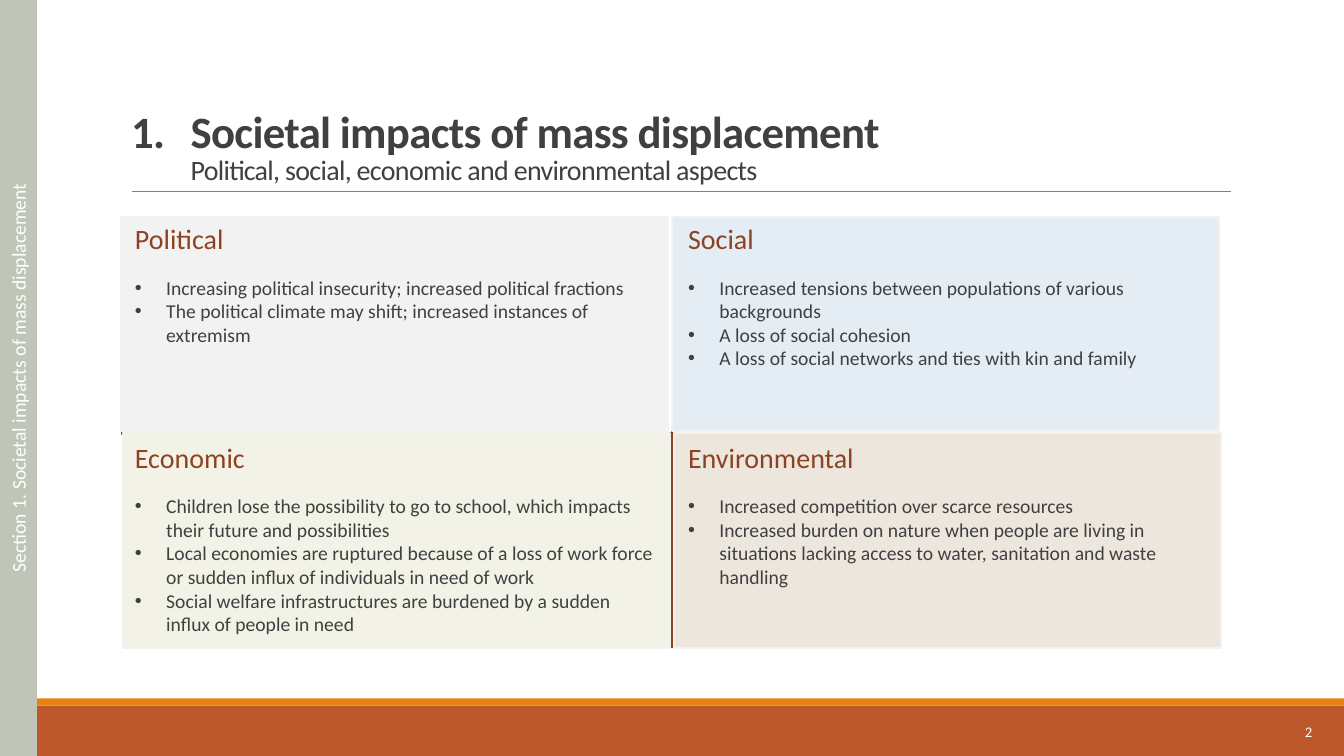
from lxml import etree
from pptx import Presentation
from pptx.dml.color import RGBColor
from pptx.enum.shapes import MSO_CONNECTOR, MSO_SHAPE
from pptx.enum.text import MSO_ANCHOR, MSO_AUTO_SIZE, PP_ALIGN
from pptx.oxml.ns import qn
from pptx.util import Cm, Pt

RECT = MSO_SHAPE.RECTANGLE
STRAIGHT = MSO_CONNECTOR.STRAIGHT
MIDDLE, BOTTOM = MSO_ANCHOR.MIDDLE, MSO_ANCHOR.BOTTOM
NO_FIT = MSO_AUTO_SIZE.NONE
LEFT, CENTER, RIGHT = PP_ALIGN.LEFT, PP_ALIGN.CENTER, PP_ALIGN.RIGHT

THEME = {
    "font": "Calibri",
    "text": "404040", "heading": "8E4221", "white": "FFFFFF", "rule": "808080",
    "footer": "BD582C", "accent": "E48312", "sidebar": "BFC6B8", "border": "F2F2F2",
    "political": "F2F2F2", "social": "E4EDF4",
    "economic": "F3F2E6", "environmental": "ECE6DD",
    "title_size": 32, "heading_size": 20, "body_size": 14, "number_size": 10.5,
}


def add_text(p, text, size="body_size", color="text", bold=False, align=LEFT, spacing=None):
    p.alignment = align
    r = p.add_run()
    r.text = text
    r.font.name = THEME["font"]
    r.font.size = Pt(THEME[size])
    r.font.bold = bold
    r.font.color.rgb = RGBColor.from_string(THEME[color])
    if spacing:
        r.font._element.set("spc", str(spacing))


def add_rect(x, y, w, h, fill, line=None):
    sp = s.shapes.add_shape(RECT, Cm(x), Cm(y), Cm(w), Cm(h))
    sp.shadow.inherit = False
    sp.fill.solid()
    sp.fill.fore_color.rgb = RGBColor.from_string(THEME[fill])
    if line:
        sp.line.color.rgb = RGBColor.from_string(THEME[line])
        sp.line.width = Pt(1.25)
    else:
        sp.line.fill.background()
    return sp


prs = Presentation()
prs.slide_width, prs.slide_height = Cm(33.87), Cm(19.05)
s = prs.slides.add_slide(prs.slide_layouts[5])

add_rect(0, 17.78, 33.87, 1.27, "footer")
add_rect(0, 17.6, 33.87, 0.18, "accent")

title = s.shapes.title
title.left, title.top, title.width, title.height = Cm(3.05), Cm(0.79), Cm(27.94), Cm(4.04)
tf = title.text_frame
tf.auto_size = NO_FIT
tf.vertical_anchor = BOTTOM
p = tf.paragraphs[0]
p.line_spacing = 0.85
p._p.get_or_add_pPr().set("marL", str(Cm(1.5)))
p._p.get_or_add_pPr().set("indent", str(-Cm(1.5)))
add_text(p, "1.\tSocietal impacts of mass displacement", size="title_size", bold=True, spacing=-50)
p.add_line_break()
etree.SubElement(p._p[-1], qn("a:rPr"), sz=str(THEME["title_size"] * 100))
add_text(p, "Political, social, economic and environmental aspects", size="heading_size", spacing=-50)

number = s.shapes.add_textbox(Cm(29.69), Cm(17.93), Cm(3.63), Cm(1.02))
tf = number.text_frame
tf.word_wrap = True
tf.vertical_anchor = MIDDLE
add_text(tf.paragraphs[0], "2", size="number_size", color="white", align=RIGHT)

sidebar = add_rect(0, 0, 0.91, 19.05, "sidebar", "sidebar")
tf = sidebar.text_frame
tf.vertical_anchor = MIDDLE
tf._txBody.bodyPr.set("vert", "vert270")
add_text(tf.paragraphs[0], "Section 1. Societal impacts of mass displacement", color="white", align=CENTER)

lines = [
    (3.33, 4.83, 31.01, 4.83, "rule", 0.5),
    (16.94, 5.49, 16.94, 16.33, "heading", 2.25),
    (3.05, 10.92, 30.78, 10.92, "heading", 2.25),
]
for x1, y1, x2, y2, color, width in lines:
    line = s.shapes.add_connector(STRAIGHT, Cm(x1), Cm(y1), Cm(x2), Cm(y2))
    line.line.color.rgb = RGBColor.from_string(THEME[color])
    line.line.width = Pt(width)
    etree.SubElement(line._element.spPr, qn("a:effectLst"))

quadrants = [
    ("Political", 0, 0, [
        "Increasing political insecurity; increased political fractions",
        "The political climate may shift; increased instances of extremism",
    ]),
    ("Environmental", 1, 1, [
        "Increased competition over scarce resources",
        "Increased burden on nature when people are living in situations lacking access "
        "to water, sanitation and waste handling",
    ]),
    ("Social", 1, 0, [
        "Increased tensions between populations of various backgrounds",
        "A loss of social cohesion",
        "A loss of social networks and ties with kin and family",
    ]),
    ("Economic", 0, 1, [
        "Children lose the possibility to go to school, which impacts their future and possibilities",
        "Local economies are ruptured because of a loss of work force "
        "or sudden influx of individuals in need of work",
        "Social welfare infrastructures are burdened by a sudden influx of people in need",
    ]),
]
for heading, col, row, bullets in quadrants:
    add_rect(3.05 + 13.89 * col + 0.05 * row, 5.46 + 5.46 * row, 13.79, 5.41, heading.lower(), "border")
    box = s.shapes.add_textbox(Cm(3.15 + 13.94 * col), Cm(5.46 + 5.51 * row), Cm(13.61), Cm(5.3))
    tf = box.text_frame
    tf.word_wrap = True
    p = tf.paragraphs[0]
    p.space_after = Pt(14.6)
    add_text(p, heading, size="heading_size", color="heading")
    for bullet in bullets:
        p = tf.add_paragraph()
        pPr = p._p.get_or_add_pPr()
        pPr.set("marL", str(Cm(0.79)))
        pPr.set("indent", str(-Cm(0.79)))
        etree.SubElement(pPr, qn("a:buFont"), typeface="Arial")
        etree.SubElement(pPr, qn("a:buChar"), char="•")
        add_text(p, bullet)

prs.save("out.pptx")
